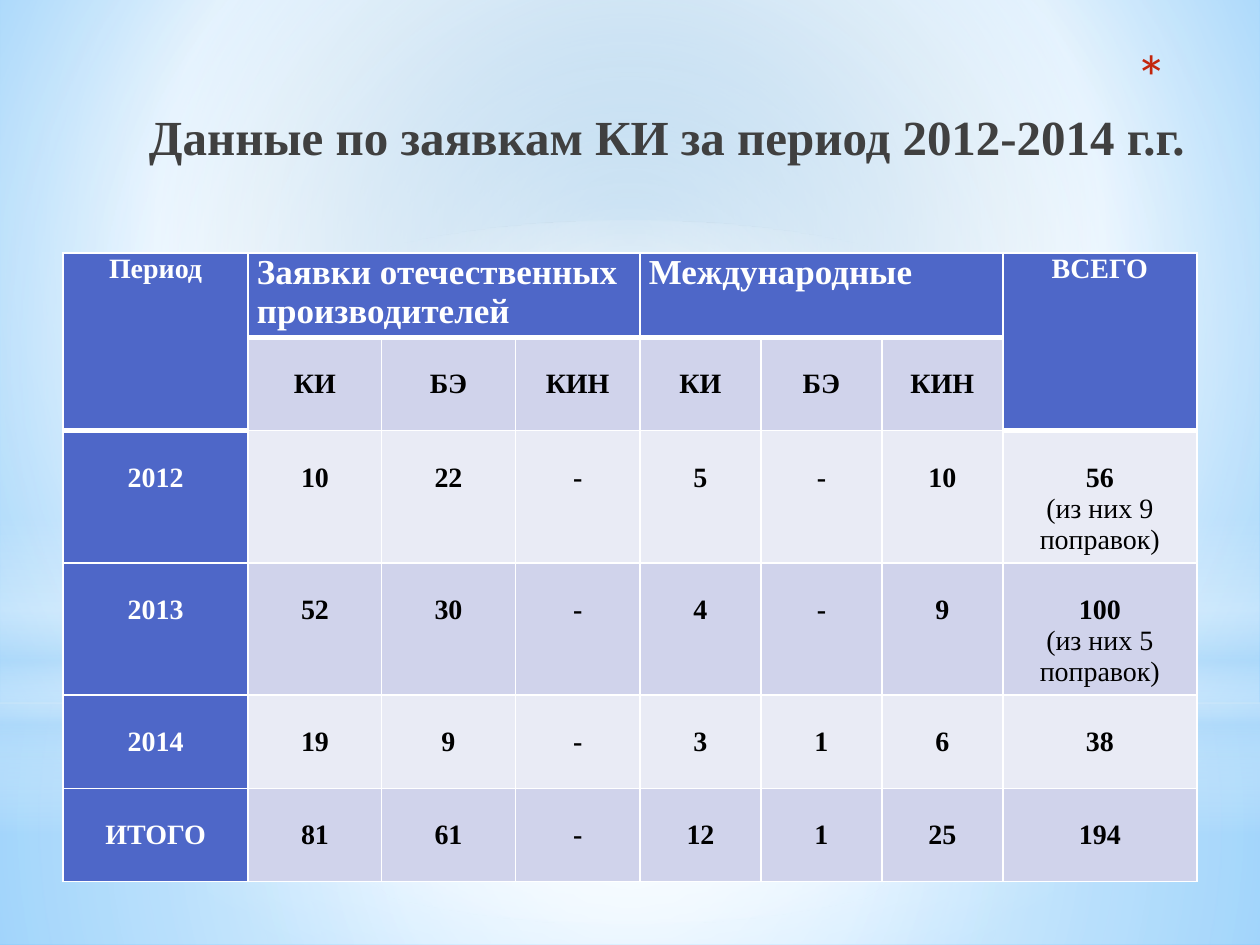
from lxml.etree import SubElement
from pptx import Presentation
from pptx.dml.color import RGBColor
from pptx.enum.shapes import MSO_SHAPE
from pptx.enum.text import MSO_ANCHOR, PP_ALIGN
from pptx.oxml.ns import qn
from pptx.oxml.xmlchemy import OxmlElement
from pptx.util import Inches, Pt

FONT = "Times New Roman"
WHITE = RGBColor(0xFF, 0xFF, 0xFF)
BLACK = RGBColor(0x00, 0x00, 0x00)
TITLE_GREY = RGBColor(0x40, 0x40, 0x40)
STAR_RED = RGBColor(0xC3, 0x26, 0x0C)
HEADER_BLUE = RGBColor(0x4E, 0x67, 0xC8)
BAND_DARK = RGBColor(0xD0, 0xD3, 0xEB)
BAND_LIGHT = RGBColor(0xE9, 0xEB, 0xF5)
SKY = RGBColor(0xB4, 0xDC, 0xFA)
DEEP_BLUE = RGBColor(0x0D, 0x79, 0xCA)
EDGE_BLUE = RGBColor(0x5B, 0xB9, 0xFF)

CENTER = (50, 50, 50, 50)
COLUMN_WIDTHS = (1.47, 1.06, 1.06, 0.99, 0.96, 0.96, 0.96, 1.54)
ROW_HEIGHTS = (0.61, 0.74, 0.98, 0.98, 0.74, 0.74)
LAST_COLUMN = len(COLUMN_WIDTHS) - 1
GROUPS = ((1, 3), (4, 6))  # first and last column of each group of applications
ROWS = (
    ("Период", "Заявки отечественных производителей", "", "", "Международные", "", "", "ВСЕГО"),
    ("", "КИ", "БЭ", "КИН", "КИ", "БЭ", "КИН", ""),
    ("2012", "10", "22", "-", "5", "-", "10", "56\n(из них 9 поправок)"),
    ("2013", "52", "30", "-", "4", "-", "9", "100\n(из них 5 поправок)"),
    ("2014", "19", "9", "-", "3", "1", "6", "38"),
    ("ИТОГО", "81", "61", "-", "12", "1", "25", "194"),
)


def apply_gradient(fill, properties, stops, focus=None):
    """Stops are (position %, colour, opacity %); without a focus the gradient runs down."""
    fill.solid()
    gradient = OxmlElement("a:gradFill")
    gradient.set("rotWithShape", "1")
    stop_list = SubElement(gradient, qn("a:gsLst"))
    for position, color, opacity in stops:
        stop = SubElement(stop_list, qn("a:gs"), pos=str(position * 1000))
        color_element = SubElement(stop, qn("a:srgbClr"), val=str(color))
        SubElement(color_element, qn("a:alpha"), val=str(opacity * 1000))
    if focus:
        circle = SubElement(gradient, qn("a:path"), {"path": "circle"})
        sides = {side: str(value * 1000) for side, value in zip("ltrb", focus)}
        SubElement(circle, qn("a:fillToRect"), sides)
    else:
        SubElement(gradient, qn("a:lin"), ang="5400000", scaled="0")
    properties.replace(properties.find(qn("a:solidFill")), gradient)


def add_backdrop(slide, width, height):
    background = slide.background.fill
    background.solid()
    properties = next(slide.element.iter(qn("p:bgPr")))
    apply_gradient(background, properties,
                   ((0, DEEP_BLUE, 100), (60, WHITE, 100), (100, EDGE_BLUE, 100)),
                   (20, 10, 20, 60))
    horizon = Inches(5.58)
    layers = (
        # floor, sky, light streaks, glow
        (MSO_SHAPE.RECTANGLE, horizon, height - horizon,
         ((0, WHITE, 91), (37, WHITE, 76), (100, SKY, 79)), CENTER),
        (MSO_SHAPE.RECTANGLE, 0, horizon,
         ((0, WHITE, 89), (48, WHITE, 62), (100, SKY, 79)), CENTER),
        (MSO_SHAPE.RECTANGLE, Inches(4.12), Inches(2.5),
         ((0, WHITE, 0), (29, WHITE, 30), (45, SKY, 40), (55, WHITE, 26),
          (65, SKY, 60), (100, WHITE, 0)), None),
        (MSO_SHAPE.OVAL, Inches(1.75), horizon,
         ((0, WHITE, 100), (56, WHITE, 0)), CENTER),
    )
    for kind, top, layer_height, stops, focus in layers:
        shape = slide.shapes.add_shape(kind, 0, top, width, layer_height)
        shape.shadow.inherit = False
        shape.line.fill.background()
        apply_gradient(shape.fill, shape.element.spPr, stops, focus)


def add_text(slide, text, left, top, width, height, size, color):
    text_frame = slide.shapes.add_textbox(left, top, width, height).text_frame
    text_frame.word_wrap = True
    text_frame.text = text
    paragraph = text_frame.paragraphs[0]
    paragraph.alignment = PP_ALIGN.RIGHT
    paragraph.font.size = Pt(size)
    paragraph.font.color.rgb = color
    return text_frame


def add_title(slide, left, top, width):
    # Star ornament above the end of the title
    star = add_text(slide, "*", left, top, width - Inches(0.14), Inches(0.5), 36, STAR_RED)
    star.margin_top = 0
    title = add_text(slide, "Данные по заявкам КИ за период 2012-2014 г.г.",
                     left, top + Inches(0.45), width, Inches(0.65), 28, TITLE_GREY)
    title.vertical_anchor = MSO_ANCHOR.MIDDLE
    title.paragraphs[0].font.name = FONT
    title.paragraphs[0].font.bold = True


def set_borders(cell, top, bottom):
    properties = cell._tc.get_or_add_tcPr()
    for index, (side, points) in enumerate((("L", 1), ("R", 1), ("T", top), ("B", bottom))):
        line = OxmlElement("a:ln" + side)
        line.set("w", str(Pt(points)))
        fill = SubElement(line, qn("a:solidFill"))
        SubElement(fill, qn("a:srgbClr"), val=str(WHITE))
        properties.insert(index, line)


def format_cell(cell, row, column):
    is_outer = column in (0, LAST_COLUMN)
    is_header = row == 0 or column == 0 or (row == 1 and is_outer)
    is_group = row == 0 and not is_outer
    cell.margin_left = cell.margin_right = Inches(0.07)
    cell.margin_top = Inches(0.25 if row else 0)
    cell.margin_bottom = 0
    cell.fill.solid()
    cell.fill.fore_color.rgb = HEADER_BLUE if is_header else (BAND_LIGHT, BAND_DARK)[row % 2]
    # A thick rule closes the header
    rule = 2 if is_outer else 1
    set_borders(cell, 3 if row == rule else 1, 3 if row + 1 == rule else 1)
    for index, paragraph in enumerate(cell.text_frame.paragraphs):
        paragraph.alignment = PP_ALIGN.LEFT if is_group else PP_ALIGN.CENTER
        for run in paragraph.runs:
            run.font.name = FONT
            run.font.size = Pt(20 if is_group else 16)
            run.font.bold = index == 0
            run.font.color.rgb = WHITE if is_header else BLACK


def add_applications_table(slide, left, top, width, height):
    table = slide.shapes.add_table(len(ROWS), len(COLUMN_WIDTHS), left, top, width, height).table
    for column, column_width in zip(table.columns, COLUMN_WIDTHS):
        column.width = Inches(column_width)
    for row, row_height in zip(table.rows, ROW_HEIGHTS):
        row.height = Inches(row_height)
    for row, texts in enumerate(ROWS):
        for column, text in enumerate(texts):
            cell = table.cell(row, column)
            cell.text_frame.text = text
            format_cell(cell, row, column)
    for column in (0, LAST_COLUMN):
        table.cell(0, column).merge(table.cell(1, column))
    for first, last in GROUPS:
        table.cell(0, first).merge(table.cell(0, last))


def main():
    presentation = Presentation()
    presentation.slide_width = Inches(10)
    presentation.slide_height = Inches(7.5)
    slide = presentation.slides.add_slide(presentation.slide_layouts[6])
    add_backdrop(slide, presentation.slide_width, presentation.slide_height)
    add_title(slide, Inches(0.5), Inches(0.3), Inches(9))
    add_applications_table(slide, Inches(0.5), Inches(2.01), Inches(9), Inches(sum(ROW_HEIGHTS)))
    presentation.save("out.pptx")


if __name__ == "__main__":
    main()
